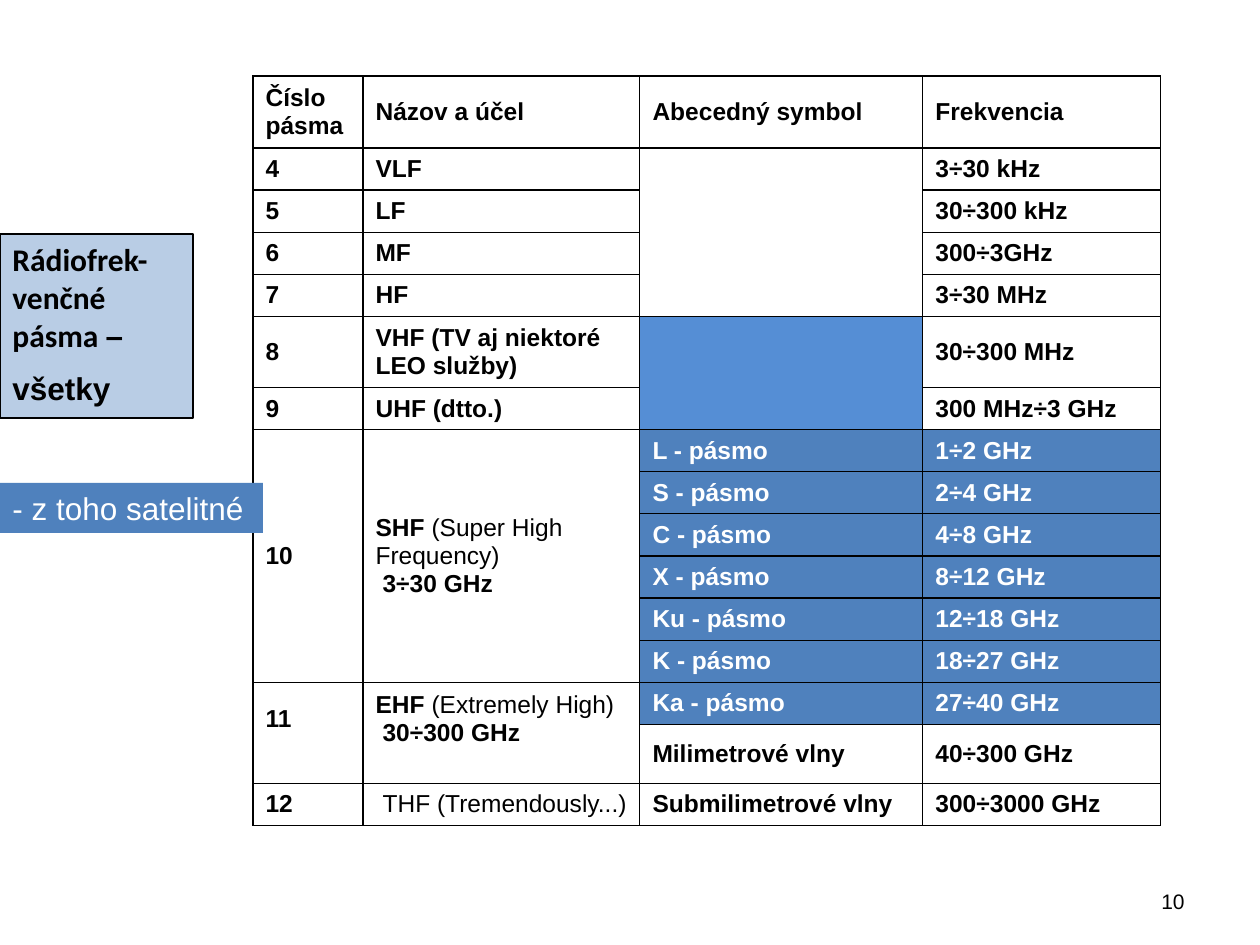
from lxml import etree
from pptx import Presentation
from pptx.dml.color import RGBColor
from pptx.enum.shapes import MSO_SHAPE
from pptx.enum.text import MSO_ANCHOR, PP_ALIGN
from pptx.oxml.ns import qn
from pptx.util import Emu, Pt

RECT = MSO_SHAPE.RECTANGLE
TOP, MIDDLE = MSO_ANCHOR.TOP, MSO_ANCHOR.MIDDLE
LEFT, RIGHT = PP_ALIGN.LEFT, PP_ALIGN.RIGHT

SCALE = 914400 / 126
BLACK, WHITE = "000000", "FFFFFF"
BLUE, SKY, PALE = "4F81BD", "558ED5", "B9CDE5"

COLS = [110, 277, 283, 238]
ROWS = [72] + [42] * 4 + [71] + [42] * 8 + [59, 42]
INDENT, LIFT = 7, 34

BOLD = {"name": "Arial", "size": Pt(14), "bold": True}
PLAIN = {**BOLD, "bold": False}
LABEL = {"name": "Arial", "size": Pt(18)}
HEAD = {"name": "Calibri", "size": Pt(18), "bold": True}
HEAD_END = {**HEAD, "name": "Arial"}
NUMBER = {"name": "Arial", "size": Pt(12)}

# Each row: band number, name, symbol, frequency; None leaves a cell empty.
BANDS = [
    ("Číslo pásma", "Názov a účel", "Abecedný symbol", "Frekvencia"),
    ("4", "VLF", None, "3÷30 kHz"),
    ("5", "LF", None, "30÷300 kHz"),
    ("6", "MF", None, "300÷3GHz"),
    ("7", "HF", None, "3÷30 MHz"),
    ("8", "VHF (TV aj niektoré LEO služby)", None, "30÷300 MHz"),
    ("9", "UHF (dtto.)", None, "300 MHz÷3 GHz"),
    ("10", None, "L - pásmo", "1÷2 GHz"),
    (None, None, "S - pásmo", "2÷4 GHz"),
    (None, None, "C - pásmo", "4÷8 GHz"),
    (None, None, "X - pásmo", "8÷12 GHz"),
    (None, None, "Ku - pásmo", "12÷18 GHz"),
    (None, None, "K - pásmo", "18÷27 GHz"),
    ("11", None, "Ka - pásmo", "27÷40 GHz"),
    (None, None, "Milimetrové vlny", "40÷300 GHz"),
    ("12", None, "Submilimetrové vlny", "300÷3000 GHz"),
]
# Names with mixed weight: row -> lines of (indent, runs).
NAMES = {
    7: [(0, [("SHF ", BOLD), ("(Super High Frequency)", PLAIN)]),
        (INDENT, [("3÷30 GHz", BOLD)])],
    13: [(0, [("EHF ", BOLD), ("(Extremely High)", PLAIN)]),
         (INDENT, [("30÷300 GHz", BOLD)])],
    15: [(INDENT, [("THF (Tremendously...)", PLAIN)])],
}
# First row, last row, column
SPANS = [(1, 4, 2), (5, 6, 2), (7, 12, 0), (7, 12, 1), (13, 14, 0), (13, 14, 1)]
SATELLITE = range(7, 14)


def px(n):
    return Emu(round(n * SCALE))


def rgb(code):
    return RGBColor.from_string(code)


def paint(item, code):
    item.fill.solid()
    item.fill.fore_color.rgb = rgb(code)


def write(frame, lines, color=BLACK, align=LEFT, gap=0):
    """Fill a text frame with lines of (indent, [(text, format)])."""
    for i, (indent, runs) in enumerate(lines):
        para = frame.add_paragraph() if i else frame.paragraphs[0]
        para.alignment = align
        if i and gap:
            para.space_before = Pt(gap)
        if indent:
            para._p.get_or_add_pPr().set("marL", str(px(indent)))
        for text, form in runs:
            run = para.add_run()
            run.text = text
            run.font.color.rgb = rgb(color)
            for key, value in form.items():
                setattr(run.font, key, value)


def edge(cell):
    """Draw a thin black border on all four sides of a cell."""
    props = cell._tc.get_or_add_tcPr()
    for i, side in enumerate(("lnL", "lnR", "lnT", "lnB")):
        line = etree.Element(qn(f"a:{side}"), w=str(Pt(0.75)))
        fill = etree.SubElement(line, qn("a:solidFill"))
        etree.SubElement(fill, qn("a:srgbClr"), val=BLACK)
        props.insert(i, line)


def add_box(slide, area, fill, lines, color=BLACK, line=None, gap=0):
    box = slide.shapes.add_shape(RECT, *map(px, area))
    box.shadow.inherit = False
    paint(box, fill)
    if line:
        box.line.color.rgb = rgb(line)
        box.line.width = Pt(0.75)
    else:
        box.line.fill.background()
    frame = box.text_frame
    frame.word_wrap = True
    frame.vertical_anchor = TOP
    write(frame, lines, color, gap=gap)


def add_bands(slide):
    area = map(px, (253, 76, sum(COLS), sum(ROWS)))
    table = slide.shapes.add_table(len(ROWS), len(COLS), *area).table
    table.first_row = table.horz_banding = False
    for col, width in zip(table.columns, COLS):
        col.width = px(width)
    for row, height in zip(table.rows, ROWS):
        row.height = px(height)
    for r, band in enumerate(BANDS):
        for c, text in enumerate(band):
            cell = table.cell(r, c)
            cell.vertical_anchor = MIDDLE
            lit = r in SATELLITE and c > 1
            paint(cell, BLUE if lit else SKY if c == 2 and r in (5, 6) else WHITE)
            edge(cell)
            lines = [(0, [(text, BOLD)])] if text else []
            if c == 1:
                lines = NAMES.get(r, lines)
            write(cell.text_frame, lines, WHITE if lit else BLACK)
    for first, last, c in SPANS:
        table.cell(first, c).merge(table.cell(last, c))
    for c in (0, 1):
        table.cell(13, c).margin_bottom = px(LIFT)


def add_number(slide):
    box = slide.shapes.add_textbox(*map(px, (903, 876, 294, 50)))
    frame = box.text_frame
    frame.word_wrap = True
    frame.vertical_anchor = MIDDLE
    write(frame, [(0, [("10", NUMBER)])], align=RIGHT)


def main():
    deck = Presentation()
    deck.slide_width, deck.slide_height = px(1260), px(945)
    slide = deck.slides.add_slide(deck.slide_layouts[6])
    add_number(slide)
    add_box(slide, (0, 234, 193, 184), PALE,
            [(0, [("Rádiofrek-venčné pásma ", HEAD), ("–", HEAD_END)]),
             (0, [("všetky", HEAD_END)])], line=BLACK, gap=9)
    add_bands(slide)
    add_box(slide, (0, 483, 263, 50), BLUE,
            [(0, [("- z toho satelitné", LABEL)])], WHITE)
    deck.save("out.pptx")


if __name__ == "__main__":
    main()
